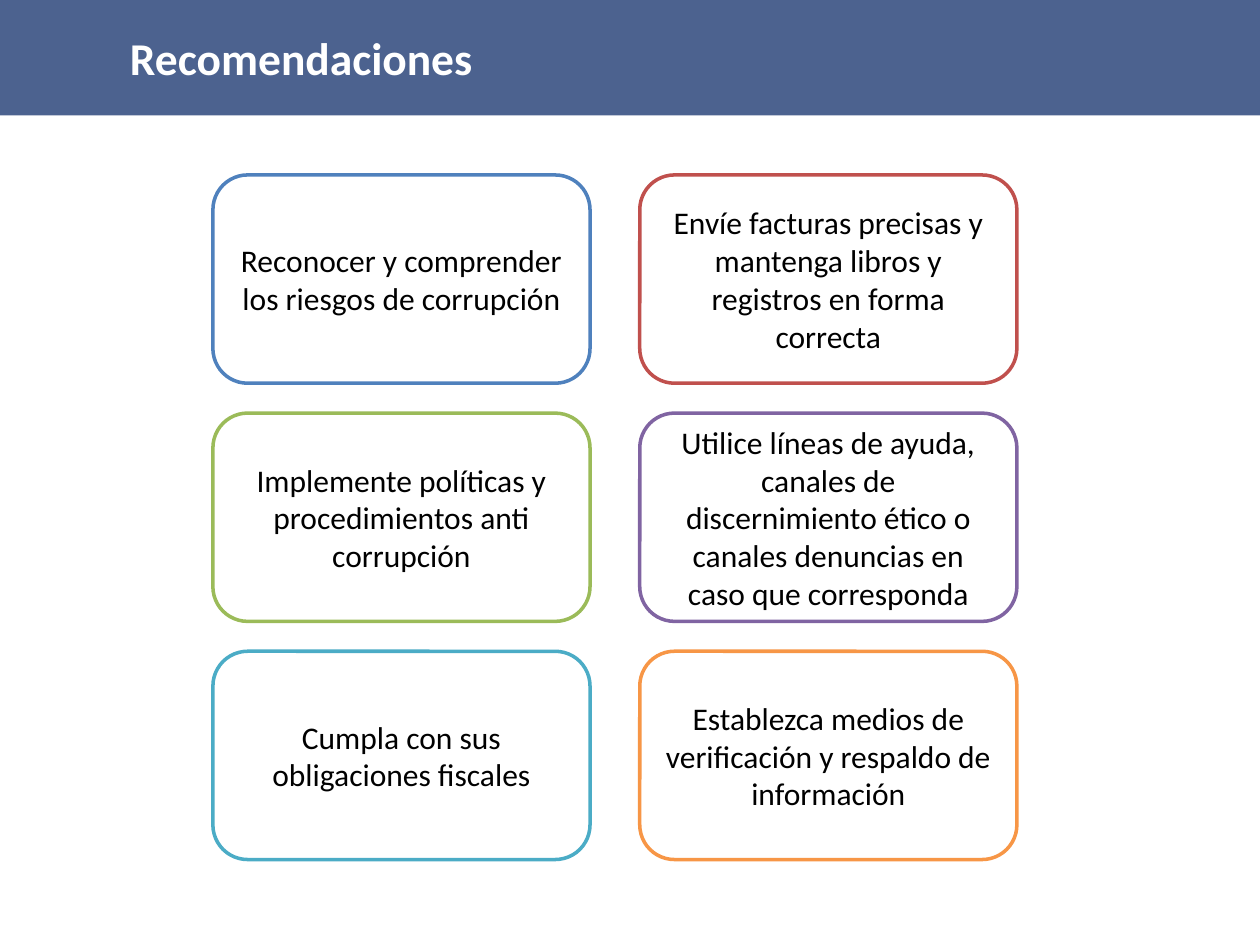
from dataclasses import dataclass

from lxml import etree
from pptx import Presentation
from pptx import util as u
from pptx.dml.color import RGBColor
from pptx.enum import shapes, text
from pptx.oxml.ns import qn


@dataclass(frozen=True)
class Theme:
    font: str = "Calibri"
    title_size: float = 26
    card_size: float = 18
    outline: float = 2
    banner: str = "002060"
    banner_opacity: int = 70
    white: str = "FFFFFF"
    black: str = "000000"


@dataclass(frozen=True)
class Box:
    left: float
    top: float
    width: float
    height: float


@dataclass(frozen=True)
class Card:
    label: str
    color: str


THEME = Theme()
SLIDE_WIDTH, SLIDE_HEIGHT = 720, 540
BANNER = Box(0, 0, SLIDE_WIDTH, 66)
TITLE_INDENT = 74.3
FIRST_CARD = Box(121.7, 100, 215.5, 119)
COLUMNS = 2
COLUMN_GAP, ROW_GAP = 28.4, 17.1

CARDS = [
    Card("Reconocer y comprender los riesgos de corrupción", "4F81BD"),
    Card("Envíe facturas precisas y mantenga libros y registros en forma correcta", "C0504D"),
    Card("Implemente políticas y procedimientos anti corrupción", "9BBB59"),
    Card(
        "Utilice líneas de ayuda, canales de discernimiento ético o "
        "canales denuncias en caso que corresponda",
        "8064A2",
    ),
    Card("Cumpla con sus obligaciones fiscales", "4BACC6"),
    Card("Establezca medios de verificación y respaldo de información", "F79646"),
]


def apply_format(target, values: dict) -> None:
    for name, value in values.items():
        setattr(target, name, value)


def add_box(slide, kind, box: Box, fill: str):
    shape = slide.shapes.add_shape(
        kind, u.Pt(box.left), u.Pt(box.top), u.Pt(box.width), u.Pt(box.height)
    )
    shape.shadow.inherit = False
    shape.fill.solid()
    shape.fill.fore_color.rgb = RGBColor.from_string(fill)
    return shape


def write_text(shape, label: str, alignment, color: str, font_format: dict) -> None:
    frame = shape.text_frame
    apply_format(frame, {"word_wrap": True, "vertical_anchor": text.MSO_ANCHOR.MIDDLE})
    paragraph = frame.paragraphs[0]
    paragraph.alignment = alignment
    run = paragraph.add_run()
    run.text = label
    apply_format(run.font, {"name": THEME.font, **font_format})
    run.font.color.rgb = RGBColor.from_string(color)


def set_opacity(shape, percent: int) -> None:
    color = shape.fill._xPr.find(qn("a:solidFill"))[0]
    etree.SubElement(color, qn("a:alpha")).set("val", str(percent * 1000))


def add_banner(slide, title: str) -> None:
    banner = add_box(slide, shapes.MSO_SHAPE.RECTANGLE, BANNER, THEME.banner)
    set_opacity(banner, THEME.banner_opacity)
    banner.line.fill.background()
    banner.text_frame.margin_left = u.Pt(TITLE_INDENT)
    title_format = {"size": u.Pt(THEME.title_size), "bold": True}
    write_text(banner, title, text.PP_ALIGN.LEFT, THEME.white, title_format)


def add_card(slide, card: Card, index: int) -> None:
    row, column = divmod(index, COLUMNS)
    box = Box(
        FIRST_CARD.left + column * (FIRST_CARD.width + COLUMN_GAP),
        FIRST_CARD.top + row * (FIRST_CARD.height + ROW_GAP),
        FIRST_CARD.width,
        FIRST_CARD.height,
    )
    shape = add_box(slide, shapes.MSO_SHAPE.ROUNDED_RECTANGLE, box, THEME.white)
    shape.line.width = u.Pt(THEME.outline)
    shape.line.color.rgb = RGBColor.from_string(card.color)
    card_format = {"size": u.Pt(THEME.card_size)}
    write_text(shape, card.label, text.PP_ALIGN.CENTER, THEME.black, card_format)


def main() -> None:
    presentation = Presentation()
    slide_size = {"slide_width": u.Pt(SLIDE_WIDTH), "slide_height": u.Pt(SLIDE_HEIGHT)}
    apply_format(presentation, slide_size)
    slide = presentation.slides.add_slide(presentation.slide_layouts[6])
    for index, card in enumerate(CARDS):
        add_card(slide, card, index)
    add_banner(slide, "Recomendaciones")
    presentation.save("out.pptx")


if __name__ == "__main__":
    main()
